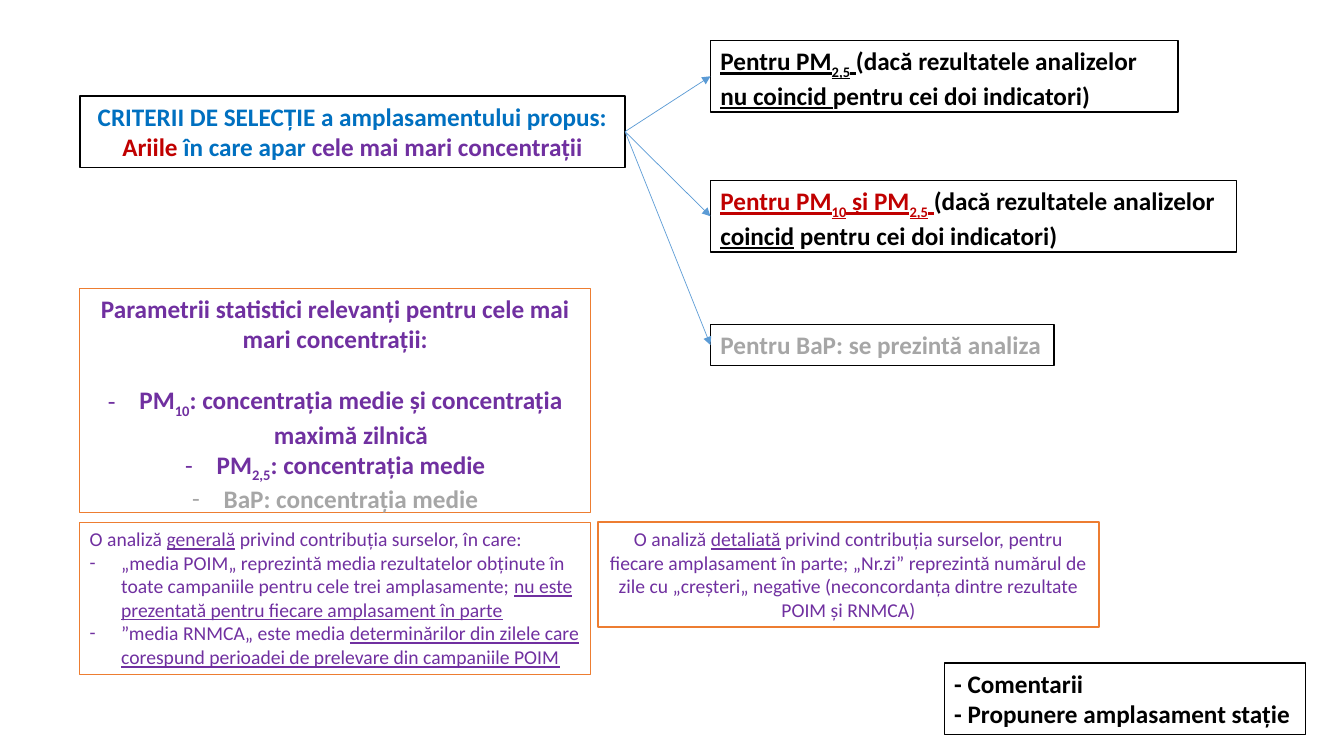
"""Builds the slide on the selection criteria for the proposed monitoring site."""
import pptx
import pptx.dml.color
import pptx.enum.shapes
import pptx.enum.text
import pptx.oxml.ns
import pptx.util
from lxml import etree

Pt = pptx.util.Pt

THEME = {
    "font": "Calibri",
    "large": 18,
    "small": 14,
    "black": "000000",
    "white": "FFFFFF",
    "blue": "0070C0",
    "red": "C00000",
    "purple": "7030A0",
    "grey": "A6A6A6",
    "orange": "ED7D31",
    "arrow": "5B9BD5",
    "outline": 1,
    "arrow_width": 0.5,
    "bullet_indent": 22.5,
    "blank_line": 22,
}

LEFT, RIGHT = 57, 507.5
NOTES_TOP = 373

# Each run is (text, colour, marks): u = underlined, s = subscript.
# Each paragraph is (runs, layout): c = centred, b = bulleted, g = gap before.
BOXES = {
    "criteria": ((LEFT, 68.5, 389.5, 51), "black", "large", [
        ([("CRITERII DE SELECȚIE a amplasamentului propus:", "blue", "")], "c"),
        ([("Ariile", "red", ""), (" în care apar ", "blue", ""),
          ("cele mai mari concentrații", "purple", "")], "c"),
    ]),
    "parameters": ((LEFT, 206, 365, 160), "orange", "large", [
        ([("Parametrii statistici relevanți pentru cele mai mari concentrații:",
           "purple", "")], "c"),
        ([("PM", "purple", ""), ("10", "purple", "s"),
          (": concentrația medie și concentrația maximă zilnică", "purple", "")], "cbg"),
        ([("PM", "purple", ""), ("2,5", "purple", "s"),
          (": concentrația medie", "purple", "")], "cb"),
        ([("BaP: concentrația medie", "grey", "")], "cb"),
    ]),
    "pm25": ((RIGHT, 29, 334, 51), "black", "large", [
        ([("Pentru PM", "black", "u"), ("2,5", "black", "us"), (" ", "black", "u"),
          ("(dacă rezultatele analizelor ", "black", ""), ("nu coincid ", "black", "u"),
          ("pentru cei doi indicatori)", "black", "")], ""),
    ]),
    "both": ((RIGHT, 129, 376, 51), "black", "large", [
        ([("Pentru PM", "red", "u"), ("10", "red", "us"), (" și PM", "red", "u"),
          ("2,5", "red", "us"), (" ", "red", "u"),
          ("(dacă rezultatele analizelor ", "black", ""), ("coincid", "black", "u"),
          (" pentru cei doi indicatori)", "black", "")], ""),
    ]),
    "bap": ((RIGHT, 232, 245.5, 29), "black", "large", [
        ([("Pentru BaP: se prezintă analiza", "grey", "")], ""),
    ]),
    "general": ((LEFT, NOTES_TOP, 365, 109), "orange", "small", [
        ([("O analiză ", "purple", ""), ("generală", "purple", "u"),
          (" privind contribuția surselor, în care:", "purple", "")], ""),
        ([("„media POIM„ reprezintă media rezultatelor obținute în toate campaniile "
           "pentru cele trei amplasamente; ", "purple", ""),
          ("nu este prezentată pentru fiecare amplasament în parte", "purple", "u")], "b"),
        ([("”media RNMCA„ este media ", "purple", ""),
          ("determinărilor din zilele care corespund perioadei de prelevare din "
           "campaniile POIM", "purple", "u")], "b"),
    ]),
    "conclusion": ((674.5, 473.5, 258, 51), "black", "large", [
        ([("- Comentarii", "black", "")], ""),
        ([("- Propunere amplasament stație", "black", "")], ""),
    ]),
    "detailed": ((427, NOTES_TOP, 358, 75), "orange", "small", [
        ([("O analiză ", "purple", ""), ("detaliată", "purple", "u"),
          (" privind contribuția surselor, pentru fiecare amplasament în parte; „Nr.zi” "
           "reprezintă numărul de zile cu „creșteri„ negative (neconcordanța dintre "
           "rezultate POIM și RNMCA)", "purple", "")], "c"),
    ]),
}
ARROWS = [("criteria", target) for target in ("pm25", "both", "bap")]
RIGHT_SITE, LEFT_SITE = 3, 1


def colour(name):
    return pptx.dml.color.RGBColor.from_string(THEME[name])


def add_child(parent, tag, **attributes):
    return etree.SubElement(parent, pptx.oxml.ns.qn(tag), attributes)


def write_paragraph(paragraph, runs, layout, size):
    align = pptx.enum.text.PP_ALIGN
    paragraph.alignment = align.CENTER if "c" in layout else align.LEFT
    if "g" in layout:
        paragraph.space_before = Pt(THEME["blank_line"])
    if "b" in layout:
        properties = paragraph._p.get_or_add_pPr()
        indent = Pt(THEME["bullet_indent"])
        properties.set("marL", str(indent))
        properties.set("indent", str(-indent))
        add_child(properties, "a:buFont", typeface=THEME["font"])
        add_child(properties, "a:buChar", char="-")
    for text, ink, marks in runs:
        run = paragraph.add_run()
        run.text = text
        run.font.name = THEME["font"]
        run.font.size = Pt(THEME[size])
        run.font.bold = size == "large"
        run.font.underline = "u" in marks
        run.font.color.rgb = colour(ink)
        if "s" in marks:
            run._r.get_or_add_rPr().set("baseline", "-25000")


def add_box(slide, place, outline, size, paragraphs):
    box = slide.shapes.add_shape(
        pptx.enum.shapes.MSO_SHAPE.RECTANGLE, *(Pt(length) for length in place))
    box.shadow.inherit = False
    box.fill.solid()
    box.fill.fore_color.rgb = colour("white")
    box.line.color.rgb = colour(outline)
    box.line.width = Pt(THEME["outline"])
    frame = box.text_frame
    frame.word_wrap = True
    frame.vertical_anchor = pptx.enum.text.MSO_ANCHOR.TOP
    for index, (runs, layout) in enumerate(paragraphs):
        paragraph = frame.add_paragraph() if index else frame.paragraphs[0]
        write_paragraph(paragraph, runs, layout, size)
    return box


def add_arrow(slide, source, target):
    arrow = slide.shapes.add_connector(
        pptx.enum.shapes.MSO_CONNECTOR.STRAIGHT,
        source.left + source.width, source.top + source.height // 2,
        target.left, target.top + target.height // 2)
    arrow.begin_connect(source, RIGHT_SITE)
    arrow.end_connect(target, LEFT_SITE)
    arrow.line.color.rgb = colour("arrow")
    arrow.line.width = Pt(THEME["arrow_width"])
    add_child(arrow.line._get_or_add_ln(), "a:tailEnd", type="triangle")
    add_child(arrow._element.spPr, "a:effectLst")


def main():
    deck = pptx.Presentation()
    deck.slide_width, deck.slide_height = Pt(960), Pt(540)
    slide = deck.slides.add_slide(deck.slide_layouts[6])
    boxes = {name: add_box(slide, *content) for name, content in BOXES.items()}
    for source, target in ARROWS:
        add_arrow(slide, boxes[source], boxes[target])
    deck.save("out.pptx")


if __name__ == "__main__":
    main()
